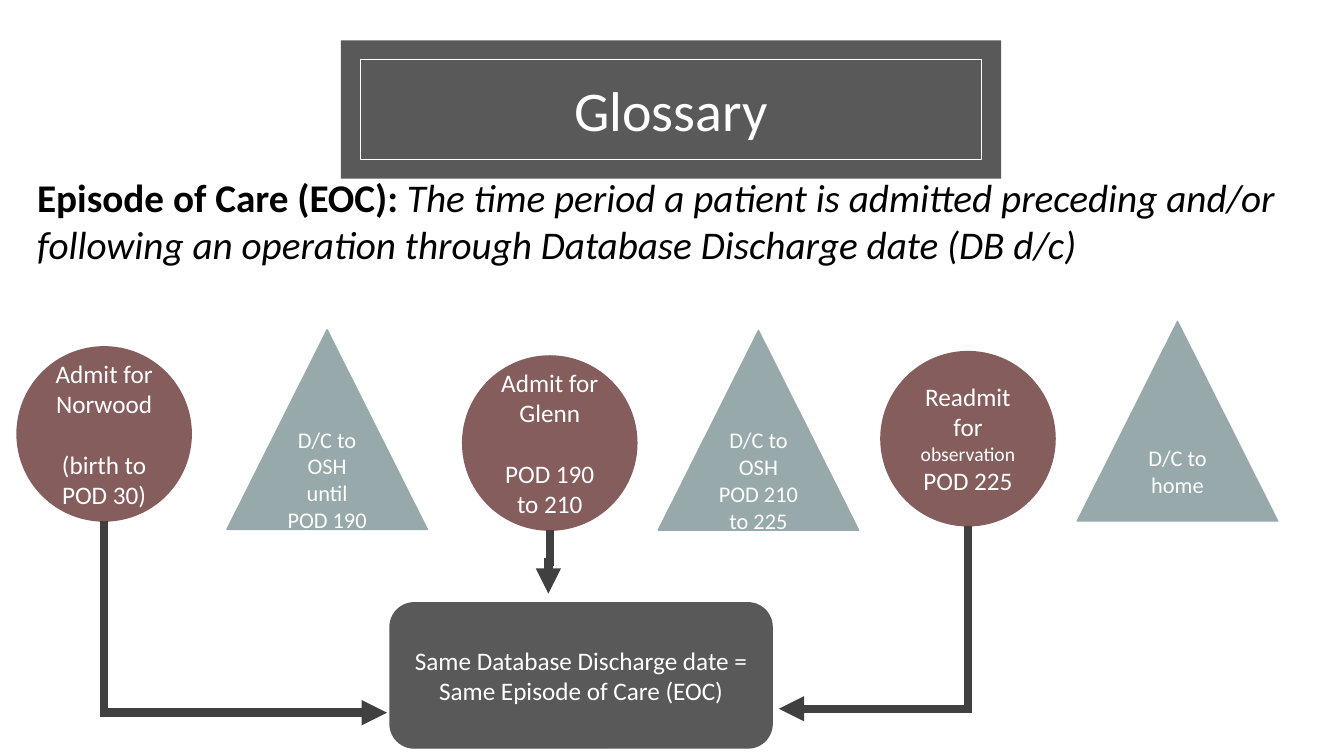
from lxml.etree import SubElement
from pptx import Presentation
from pptx.dml.color import RGBColor
from pptx.enum.shapes import MSO_CONNECTOR, MSO_SHAPE
from pptx.enum.text import MSO_ANCHOR, MSO_AUTO_SIZE, PP_ALIGN
from pptx.oxml.ns import qn
from pptx.util import Cm, Pt

GREY, ROSE, SAGE, ARROW = "595959", "855D5D", "97A9AA", "404040"
WHITE, BLACK = "FFFFFF", "000000"
CIRCLE_SIZE = 4.39
TRIANGLE_WIDTH, TRIANGLE_HEIGHT = 5.05, 5.03
ADMISSIONS = [
    (0.43, 8.74, [[("Admit for Norwood", 18)], [("(birth to POD 30)", 18)]], 22),
    (11.66, 8.97, [[("Admit for Glenn", 18)], [("POD 190 to 210", 18)]], 22),
    (22.2, 8.86, [[("Readmit for ", 18), ("observation", 14)], [("POD 225", 18)]], 0),
]
DISCHARGES = [
    (5.72, 8.31, "D/C to OSH until POD 190"),
    (16.59, 8.33, "D/C to OSH POD 210 to 225"),
    (27.15, 8.1, "D/C to home"),
]


def paint(color_format, color):
    """Set a fill, line or font colour from a hex string."""
    color_format.rgb = RGBColor.from_string(color)


def place(item, box):
    """Move an item to a box given in centimetres."""
    item.left, item.top, item.width, item.height = (Cm(length) for length in box)


def write(frame, paragraphs, color, align, gap=0):
    """Fill a text frame with paragraphs of (text, size) pieces."""
    frame.word_wrap = True
    for index, pieces in enumerate(paragraphs):
        paragraph = frame.add_paragraph() if index else frame.paragraphs[0]
        paragraph.alignment = align
        paragraph.space_before = Pt(gap if index else 0)
        paragraph.text = pieces[0][0]
        for text, _ in pieces[1:]:
            paragraph.add_run().text = text
        for run, (_, size) in zip(paragraph.runs, pieces):
            run.font.name = "Calibri"
            run.font.size = Pt(size)
            paint(run.font.color, color)


def add_block(slide, preset, box, color, paragraphs=(), gap=0, outlined=True):
    """Draw a filled preset shape with centred white text."""
    block = slide.shapes.add_shape(preset, *(Cm(length) for length in box))
    block.shadow.inherit = False
    block.fill.solid()
    paint(block.fill.fore_color, color)
    if outlined:
        paint(block.line.color, color)
        block.line.width = Pt(1)
    else:
        block.line.fill.background()
    block.text_frame.vertical_anchor = MSO_ANCHOR.MIDDLE
    write(block.text_frame, paragraphs, WHITE, PP_ALIGN.CENTER, gap)
    return block


def add_heading(slide, box):
    """Place the title inside a grey banner with a white inner frame."""
    left, top, width, height = box
    banner = add_block(slide, MSO_SHAPE.RECTANGLE, box, GREY, outlined=False)
    slide.shapes.element.insert(2, banner.element)
    title = slide.shapes.title
    place(title, (left + 0.5, top + 0.49, width - 1, height - 0.98))
    title.fill.solid()
    paint(title.fill.fore_color, GREY)
    paint(title.line.color, WHITE)
    title.line.width = Pt(0.75)
    title.text_frame.auto_size = MSO_AUTO_SIZE.NONE
    title.text_frame.vertical_anchor = MSO_ANCHOR.MIDDLE
    write(title.text_frame, [[("Glossary", 40)]], WHITE, PP_ALIGN.CENTER)


def add_definition(slide, box):
    """Write the term in bold and its meaning in italics."""
    body = slide.placeholders[1]
    place(body, box)
    frame = body.text_frame
    frame.auto_size = MSO_AUTO_SIZE.NONE
    frame.vertical_anchor = MSO_ANCHOR.TOP
    meaning = ("The time period a patient is admitted preceding and/or following "
               "an operation through Database Discharge date (DB d/c)")
    write(frame, [[("Episode of Care (EOC): ", 28), (meaning, 28)]], BLACK, PP_ALIGN.LEFT)
    paragraph = frame.paragraphs[0]
    paragraph.space_before = Pt(18)
    properties = paragraph.runs[0].font
    properties.bold = True
    paragraph.runs[1].font.italic = True
    layout = paragraph._p.get_or_add_pPr()
    layout.set("marL", str(Cm(0.48)))
    layout.set("indent", "0")
    SubElement(layout, qn("a:buNone"))


def add_bent_arrow(slide, start, end, preset):
    """Draw an arrow that leaves its start downwards and bends to its end."""
    (start_x, start_y), (end_x, end_y) = start, end
    across, down = abs(end_x - start_x), end_y - start_y
    middle_x, middle_y = (start_x + end_x) / 2, (start_y + end_y) / 2
    left, right = middle_x - down / 2, middle_x + down / 2
    rightward = end_x > start_x
    if rightward:
        left, right = right, left
    arrow = slide.shapes.add_connector(
        MSO_CONNECTOR.ELBOW, Cm(left), Cm(middle_y - across / 2),
        Cm(right), Cm(middle_y + across / 2))
    paint(arrow.line.color, ARROW)
    arrow.line.width = Pt(6)
    outline = arrow.line._get_or_add_ln()
    SubElement(outline, qn("a:miter"), lim="800000")
    SubElement(outline, qn("a:tailEnd"), type="triangle")
    shape_properties = arrow._element.spPr
    SubElement(shape_properties, qn("a:effectLst"))
    shape_properties.find(qn("a:prstGeom")).set("prst", preset)
    quarter_turns = 3 if rightward else 1
    shape_properties.find(qn("a:xfrm")).set("rot", str(quarter_turns * 5400000))


def add_timeline(slide):
    """Draw the admissions as circles and the discharges as triangles."""
    for (left, top, admission, gap), (peak_left, peak_top, discharge) in zip(ADMISSIONS, DISCHARGES):
        add_block(slide, MSO_SHAPE.OVAL, (left, top, CIRCLE_SIZE, CIRCLE_SIZE),
                  ROSE, admission, gap)
        add_block(slide, MSO_SHAPE.ISOSCELES_TRIANGLE,
                  (peak_left, peak_top, TRIANGLE_WIDTH, TRIANGLE_HEIGHT),
                  SAGE, [[(discharge, 16)]])


def add_conclusion(slide, box):
    """Draw the shared episode box and the arrows from each admission."""
    left, top, width, _ = box
    norwood, glenn, readmission = [
        (circle_left + CIRCLE_SIZE / 2, circle_top + CIRCLE_SIZE)
        for circle_left, circle_top, *_ in ADMISSIONS]
    add_bent_arrow(slide, norwood, (left - 0.08, top + 2.77), "bentConnector2")
    add_bent_arrow(slide, readmission, (left + width + 0.17, top + 2.67), "bentConnector2")
    add_bent_arrow(slide, glenn, (left + 3.99, top - 0.23), "bentConnector3")
    add_block(slide, MSO_SHAPE.ROUNDED_RECTANGLE, box, GREY,
              [[("Same Database Discharge date =", 18)], [("Same Episode of Care (EOC)", 18)]])


def main():
    """Build the glossary slide and save it."""
    deck = Presentation()
    deck.slide_width, deck.slide_height = Cm(33.87), Cm(19.05)
    slide = deck.slides.add_slide(deck.slide_layouts[1])
    add_heading(slide, (8.59, 1.02, 16.64, 3.48))
    add_definition(slide, (0.2, 4.24, 33.43, 9.25))
    add_timeline(slide)
    add_conclusion(slide, (9.83, 15.19, 9.63, 3.66))
    deck.save("out.pptx")


if __name__ == "__main__":
    main()
